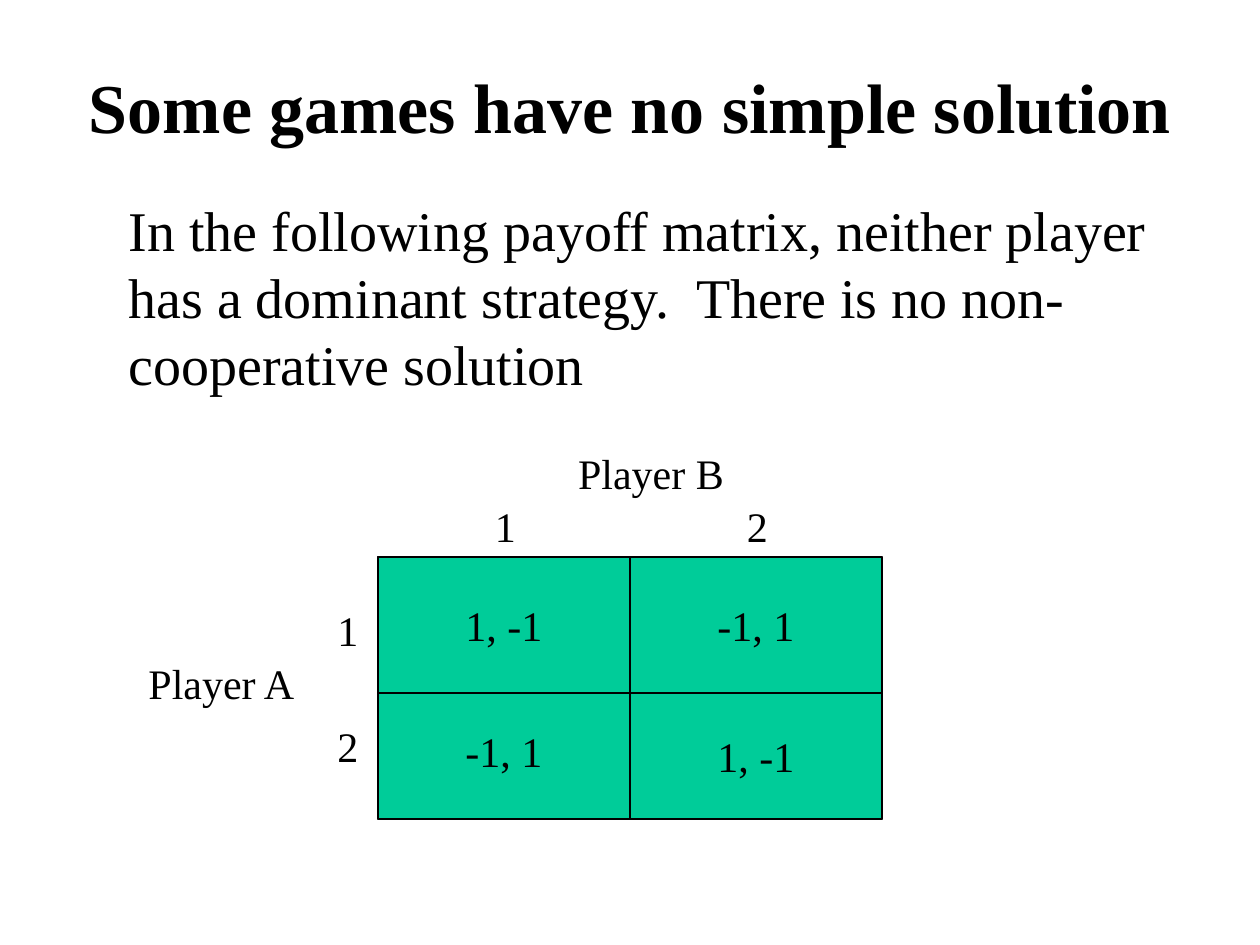
from pptx import Presentation
from pptx.dml.color import RGBColor
from pptx.enum.shapes import MSO_SHAPE
from pptx.enum.text import MSO_ANCHOR, MSO_AUTO_SIZE, PP_ALIGN
from pptx.oxml.ns import qn
from pptx.util import Inches, Pt
from lxml import etree

RECT = MSO_SHAPE.RECTANGLE
TOP, MID = MSO_ANCHOR.TOP, MSO_ANCHOR.MIDDLE
LEFT, MEET = PP_ALIGN.LEFT, PP_ALIGN.CENTER
FIXED, GROW = MSO_AUTO_SIZE.NONE, MSO_AUTO_SIZE.SHAPE_TO_FIT_TEXT

TITLE = "Some games have no simple solution"
BODY = ("In the following payoff matrix, neither player has a dominant "
        "strategy.  There is no non-cooperative solution")
GRID = (3, 4.42, 4, 2.08)
WIDE = GRID[2] / 2
CELLS = [
    ("", GRID),
    ("-1, 1", (3, 5.42, WIDE, 1.08)),
    ("1, -1", (3, 4.42, WIDE, 1.08)),
    ("-1, 1", (3 + WIDE, 4.42, WIDE, 1.08)),
    ("1, -1", (3 + WIDE, 5.5, WIDE, 1)),
]
LABELS = [
    ("Player A", (1.08, 5.17, 1.38, 0.5)),
    ("1", (2.58, 4.75, 0.37, 0.5)),
    ("2", (2.58, 5.67, 0.37, 0.5)),
    ("Player B", (4.49, 3.5, 1.36, 0.5)),
    ("1", (3.83, 3.92, 0.37, 0.5)),
    ("2", (3.83 + WIDE, 3.92, 0.37, 0.5)),
]
FONT = "Times New Roman"
INK, GREEN = "000000", "00CC99"


def color(target, code):
    target.rgb = RGBColor.from_string(code)


def assign(target, values):
    for name, value in values.items():
        setattr(target, name, value)


def place(shape, box):
    names = ("left", "top", "width", "height")
    assign(shape, dict(zip(names, map(Inches, box))))


def write(shape, text, size, frame, align, bold=False):
    box = shape.text_frame
    assign(box, frame)
    para = box.paragraphs[0]
    para.alignment = align
    run = para.add_run()
    run.text = text
    assign(run.font, {"name": FONT, "size": Pt(size), "bold": bold})
    color(run.font.color, INK)
    return para


def add_cell(slide, text, box):
    cell = slide.shapes.add_shape(RECT, *map(Inches, box))
    cell.shadow.inherit = False
    cell.fill.solid()
    color(cell.fill.fore_color, GREEN)
    color(cell.line.color, INK)
    cell.line.width = Pt(0.75)
    if text:
        frame = {"word_wrap": False, "vertical_anchor": MID}
        write(cell, text, 24, frame, MEET)


def add_label(slide, text, box):
    label = slide.shapes.add_textbox(*map(Inches, box))
    write(label, text, 24, {"word_wrap": False, "auto_size": GROW}, LEFT)


def main():
    deck = Presentation()
    assign(deck, {"slide_width": Inches(10), "slide_height": Inches(7.5)})
    slide = deck.slides.add_slide(deck.slide_layouts[1])
    title, body = slide.placeholders
    place(title, (0, 0.42, 10, 0.83))
    place(body, (0.92, 1.5, 8.5, 1.25))
    frame = {"word_wrap": True, "auto_size": FIXED}
    write(title, TITLE, 40, {**frame, "vertical_anchor": MID}, MEET, True)
    para = write(body, BODY, 32, {**frame, "vertical_anchor": TOP}, LEFT)
    para.space_before = Pt(6.4)
    props = para._p.get_or_add_pPr()
    props.set("marL", "0")
    props.set("indent", "0")
    etree.SubElement(props, qn("a:buNone"))

    for text, box in CELLS[:-1]:
        add_cell(slide, text, box)
    for text, box in LABELS:
        add_label(slide, text, box)
    add_cell(slide, *CELLS[-1])
    deck.save("out.pptx")


if __name__ == "__main__":
    main()
